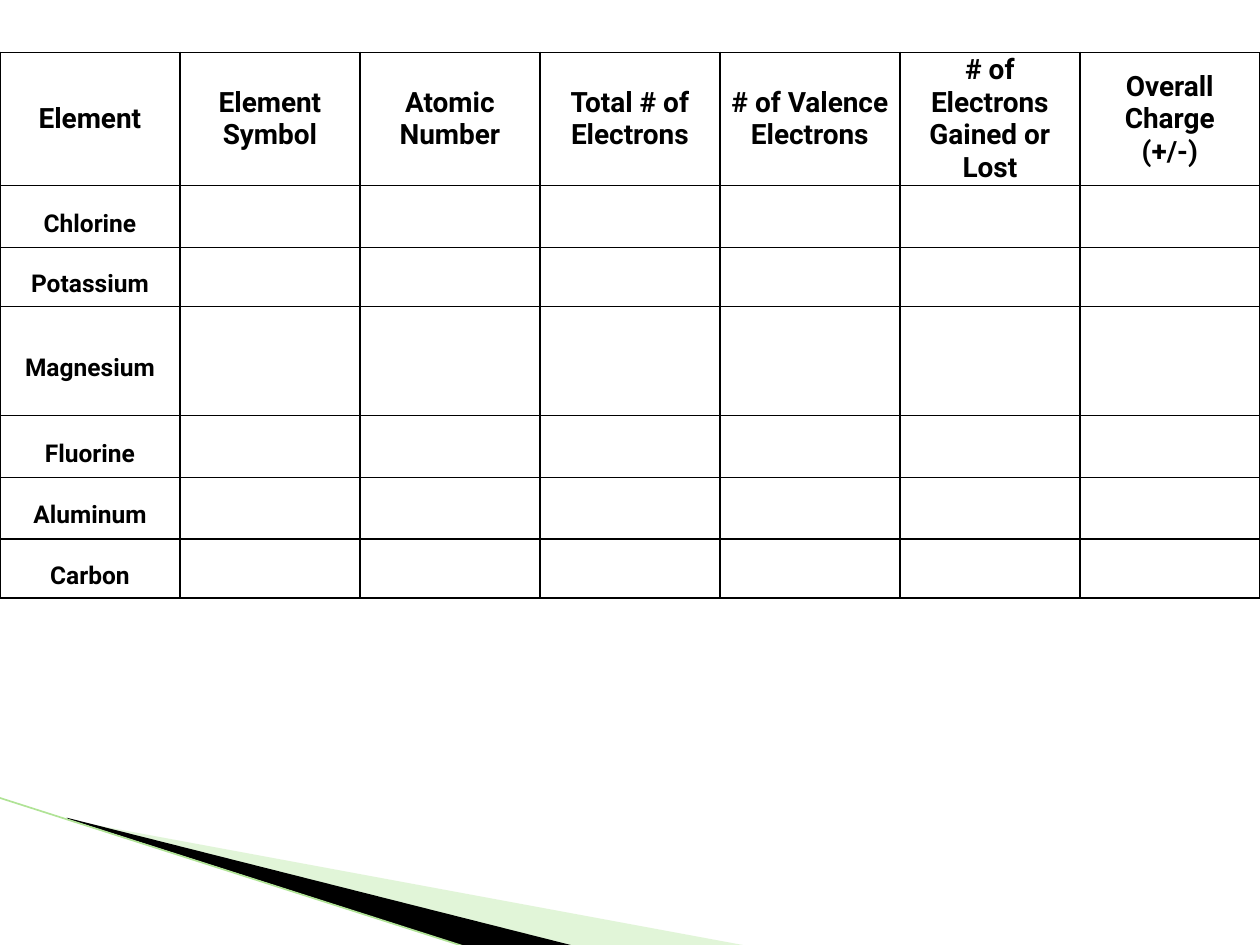
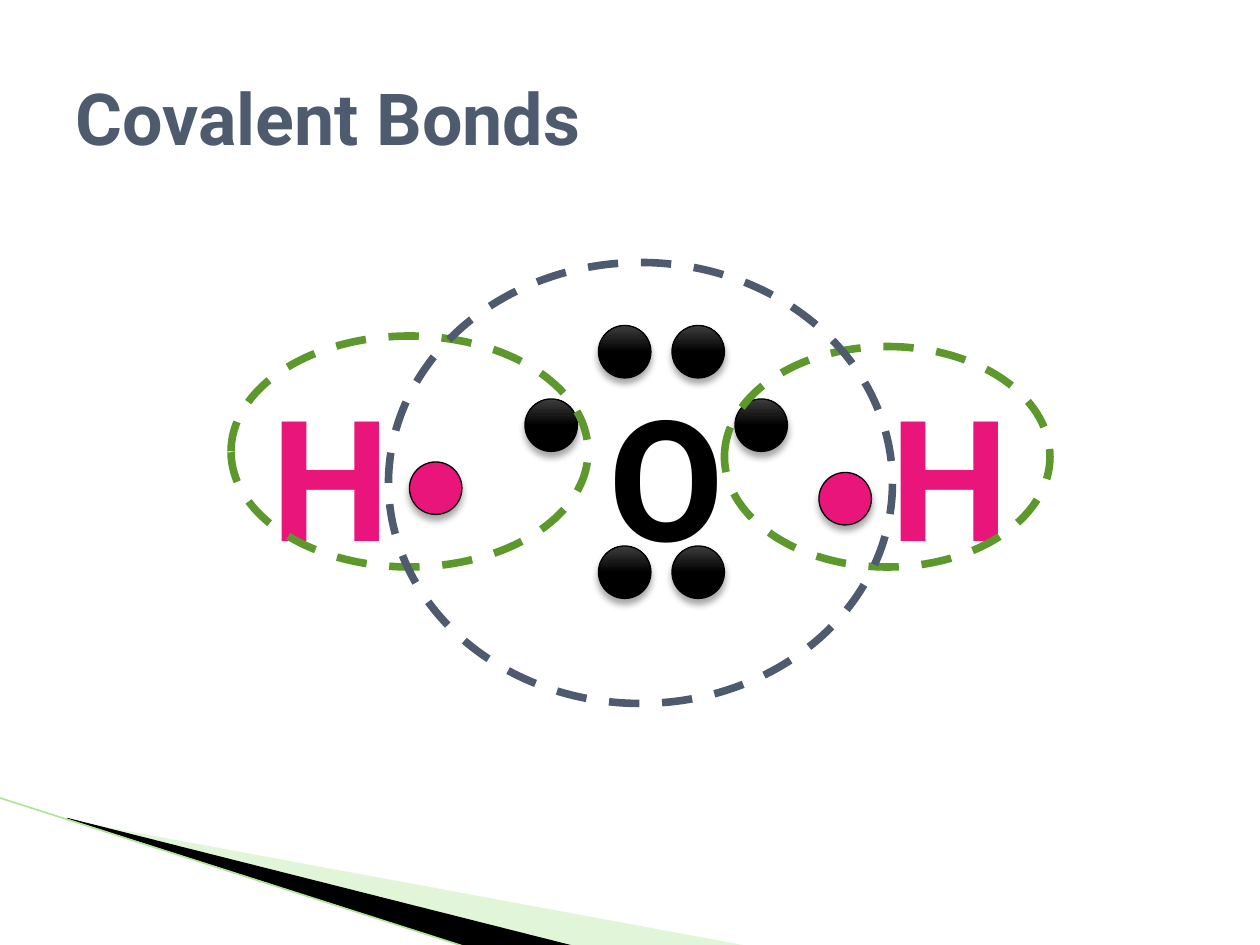
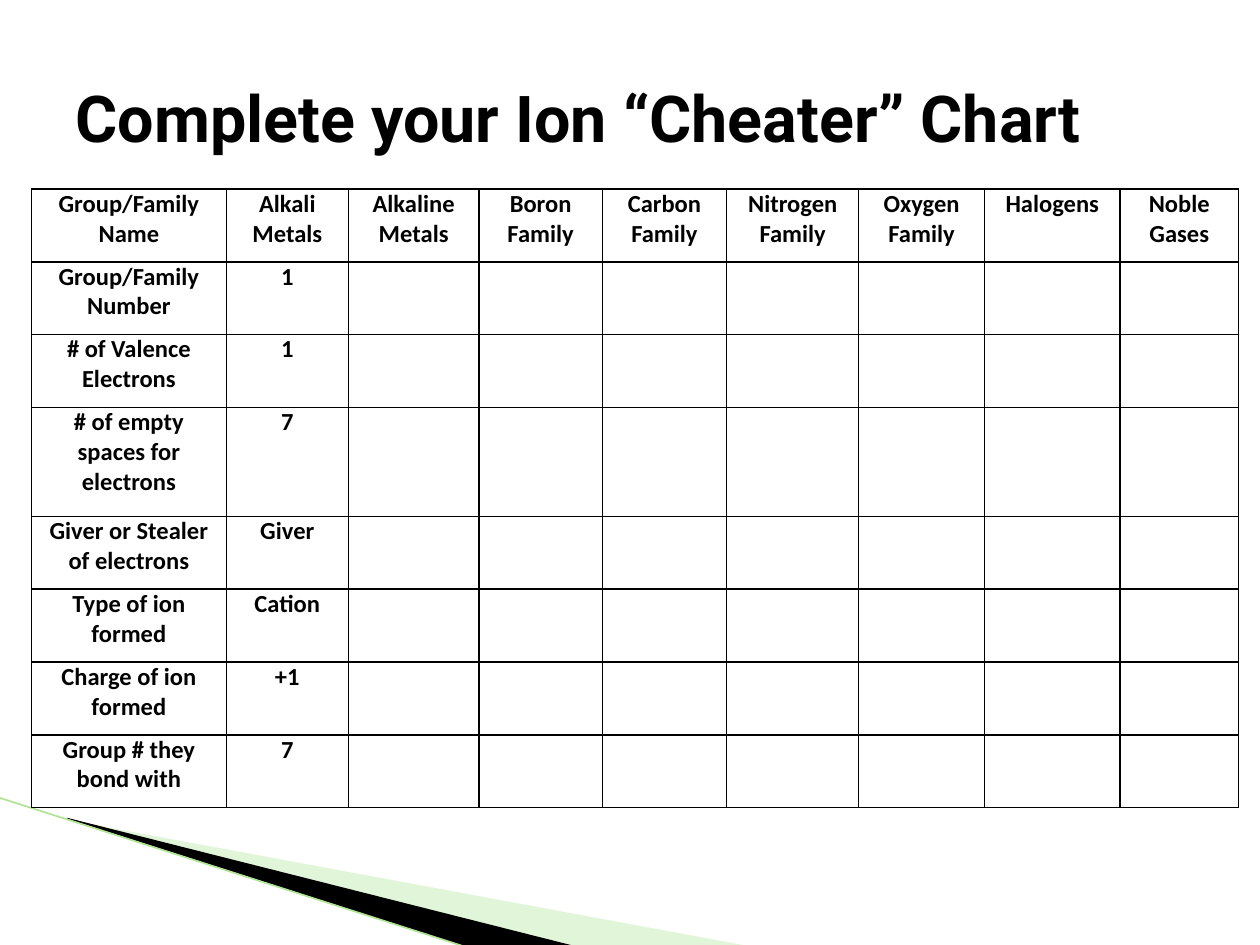
import lxml.etree
import pptx
import pptx.dml.color
import pptx.enum.dml
import pptx.enum.shapes
import pptx.enum.text
import pptx.oxml.ns
import pptx.util

Inches = pptx.util.Inches
Pt = pptx.util.Pt
RGB = pptx.dml.color.RGBColor.from_string
qn = pptx.oxml.ns.qn
Align = pptx.enum.text.PP_ALIGN
Anchor = pptx.enum.text.MSO_ANCHOR
Shape = pptx.enum.shapes.MSO_SHAPE

hues = {
    "black": "000000",
    "coal": "191919",
    "smoke": "3E3E3E",
    "slate": "4E5B6F",
    "pink": "EA157A",
    "green": "5C982B",
    "mint": "B6E69E",
    "lime": "B0E396",
}


def sub(node, tag, **attrs):
    return lxml.etree.SubElement(node, qn(tag), attrs)


def write(frame, text, size=14, font="Roboto", hue="black", align=Align.CENTER, space=None):
    frame.word_wrap = True
    for i, line in enumerate(text.split("\n")):
        para = frame.paragraphs[0] if i == 0 else frame.add_paragraph()
        para.alignment = align
        if space:
            para.line_spacing = space
        run = para.add_run()
        run.text = line
        run.font.size = Pt(size)
        run.font.name = font
        run.font.bold = True
        run.font.color.rgb = RGB(hues[hue])


deck = pptx.Presentation()
deck.slide_width = Inches(10)
deck.slide_height = Inches(7.5)

wedges = [
    ("mint", 40, (0.78, 5.47, 4.16, 1.58),
     [(0.55, 6.51), (5.95, 7.51), (4.56, 7.51), (0.55, 6.5)]),
    ("black", 100, (-0.06, 6.33, 4.16, 0.92),
     [(0.53, 6.49), (4.57, 7.51), (3.72, 7.52), (0.54, 6.5)]),
]
titles = [
    None,
    ("Covalent Bonds", 41, "slate"),
    ("Complete your Ion “Cheater” Chart", 36.9, "black"),
]
slides = []
for title in titles:
    slide = deck.slides.add_slide(deck.slide_layouts[6])
    slides.append(slide)
    for hue, alpha, frame, points in wedges:
        left, top, width, height = map(Inches, frame)
        points = [(Inches(x), Inches(y)) for x, y in points]
        pen = slide.shapes.build_freeform(*points[0])
        pen.add_line_segments(points[1:])
        wedge = pen.convert_to_shape()
        wedge.left, wedge.top, wedge.width, wedge.height = left, top, width, height
        props = wedge._element.spPr
        track = next(props.iter(qn("a:path")))
        track.set("w", str(width))
        track.set("h", str(height))
        for spot, (x, y) in zip(track.iter(qn("a:pt")), points):
            spot.set("x", str(x - left))
            spot.set("y", str(y - top))
        wedge.shadow.inherit = False
        wedge.line.fill.background()
        wedge.fill.solid()
        wedge.fill.fore_color.rgb = RGB(hues[hue])
        tint = props.find(qn("a:solidFill"))[0]
        sub(tint, "a:alpha", val=str(alpha * 1000))
    edge = slide.shapes.add_connector(
        pptx.enum.shapes.MSO_CONNECTOR.STRAIGHT,
        Inches(-0.01), Inches(6.33), Inches(3.71), Inches(7.52))
    edge.line.color.rgb = RGB(hues["lime"])
    edge.line.width = Pt(0.95)
    sub(edge._element.spPr, "a:effectLst")
    if title:
        text, size, hue = title
        box = slide.shapes.add_textbox(Inches(0.5), Inches(0.3), Inches(9), Inches(1.25))
        box.text_frame.vertical_anchor = Anchor.MIDDLE
        write(box.text_frame, text, size=size, hue=hue, align=Align.LEFT)

heads = ["Element", "Element Symbol", "Atomic Number", "Total # of Electrons",
         "# of Valence Electrons", "# of Electrons Gained or Lost", "Overall Charge\n(+/-)"]
atoms = ["Chlorine", "Potassium", "Magnesium", "Fluorine", "Aluminum", "Carbon"]
groups = [
    ["Group/Family Name", "Alkali Metals", "Alkaline Metals", "Boron Family", "Carbon Family",
     "Nitrogen Family", "Oxygen Family", "Halogens", "Noble Gases"],
    ["Group/Family Number", "1"],
    ["# of Valence Electrons", "1"],
    ["# of empty spaces for electrons", "7"],
    ["Giver or Stealer of electrons", "Giver"],
    ["Type of ion formed", "Cation"],
    ["Charge of ion formed", "+1"],
    ["Group # they bond with", "7"],
]
charts = [
    dict(slide=slides[0], place=(0, 5 / 12, 10, 4.33), cols=[1] * 7,
         rows=[1.06, 0.49, 0.47, 0.87, 0.49, 0.49, 0.47],
         cells=[heads] + [[atom] for atom in atoms], anchor=Anchor.MIDDLE,
         head=dict(size=16), body=dict(space=1.5)),
    dict(slide=slides[2], place=(0.25, 1.5, 9.58, 4.91),
         cols=[1.55, 0.97, 1.04, 0.98, 0.99, 1.05, 1, 1.08, 0.94],
         rows=[0.58] * 3 + [0.87] + [0.58] * 4,
         cells=groups, anchor=Anchor.TOP,
         head=dict(font="Calibri"), body=dict(font="Calibri")),
]
for chart in charts:
    cols, rows = chart["cols"], chart["rows"]
    left, top, wide, high = map(Inches, chart["place"])
    table = chart["slide"].shapes.add_table(len(rows), len(cols), left, top, wide, high).table
    table.first_row = False
    table.horz_banding = False
    for col, share in zip(table.columns, cols):
        col.width = round(wide * share / sum(cols))
    for row, share in zip(table.rows, rows):
        row.height = round(high * share / sum(rows))
    for cell in table.iter_cells():
        props = cell._tc.get_or_add_tcPr()
        for side in "LRTB":
            rule = sub(props, "a:ln" + side, w=str(Pt(1)))
            sub(sub(rule, "a:solidFill"), "a:srgbClr", val=hues["black"])
        cell.fill.background()
    for r, texts in enumerate(chart["cells"]):
        for c, text in enumerate(texts):
            cell = table.cell(r, c)
            cell.margin_left = cell.margin_right = Inches(0.07)
            cell.margin_top = cell.margin_bottom = 0
            cell.vertical_anchor = chart["anchor"]
            write(cell.text_frame, text, **chart["body" if r else "head"])

unit = Inches(1) // 12
bonds = slides[1].shapes
for left, text, hue in [(18, "H", "pink"), (77, "H", "pink"), (50, "O", "black")]:
    box = bonds.add_textbox(left * unit, 35 * unit, 27 * unit, Inches(1.72))
    write(box.text_frame, text, size=96, hue=hue)

dots = [
    (39, 44, "pink"),
    (57, 31, "black"),
    (64, 31, "black"),
    (50, 38, "black"),
    (70, 38, "black"),
    (57, 52, "black"),
    (64, 52, "black"),
    (78, 45, "pink"),
]
shine = [(0, "black"), (50, "black"), (70, "coal"), (100, "smoke")]
for left, top, hue in dots:
    dot = bonds.add_shape(Shape.OVAL, left * unit, top * unit, 5 * unit, 5 * unit)
    props = dot._element.spPr
    dot.line.color.rgb = RGB(hues["black"])
    dot.line.width = Pt(0.75)
    if hue == "pink":
        dot.fill.solid()
        dot.fill.fore_color.rgb = RGB(hues[hue])
    else:
        dot.fill.gradient()
        dot.fill.gradient_angle = 90
        stops = props.find(qn("a:gradFill")).find(qn("a:gsLst"))
        for stop in list(stops):
            stops.remove(stop)
        for place, shade in shine:
            stop = sub(stops, "a:gs", pos=str(place * 1000))
            sub(stop, "a:srgbClr", val=hues[shade])
    dot.shadow.inherit = False
    shade = sub(props.find(qn("a:effectLst")), "a:outerShdw", blurRad=str(Pt(4)),
                dist=str(Pt(3)), dir="5400000", rotWithShape="0")
    sub(sub(shade, "a:srgbClr", val=hues["black"]), "a:alpha", val="35000")

rings = [
    (69, 33, 31, 21, "green"),
    (22, 32, 34, 22, "green"),
    (37, 25, 48, 42, "slate"),
]
for *place, hue in rings:
    ring = bonds.add_shape(Shape.OVAL, *(step * unit for step in place))
    ring.shadow.inherit = False
    ring.fill.background()
    ring.line.color.rgb = RGB(hues[hue])
    ring.line.width = Pt(4.33)
    ring.line.dash_style = pptx.enum.dml.MSO_LINE.DASH

deck.save("out.pptx")
